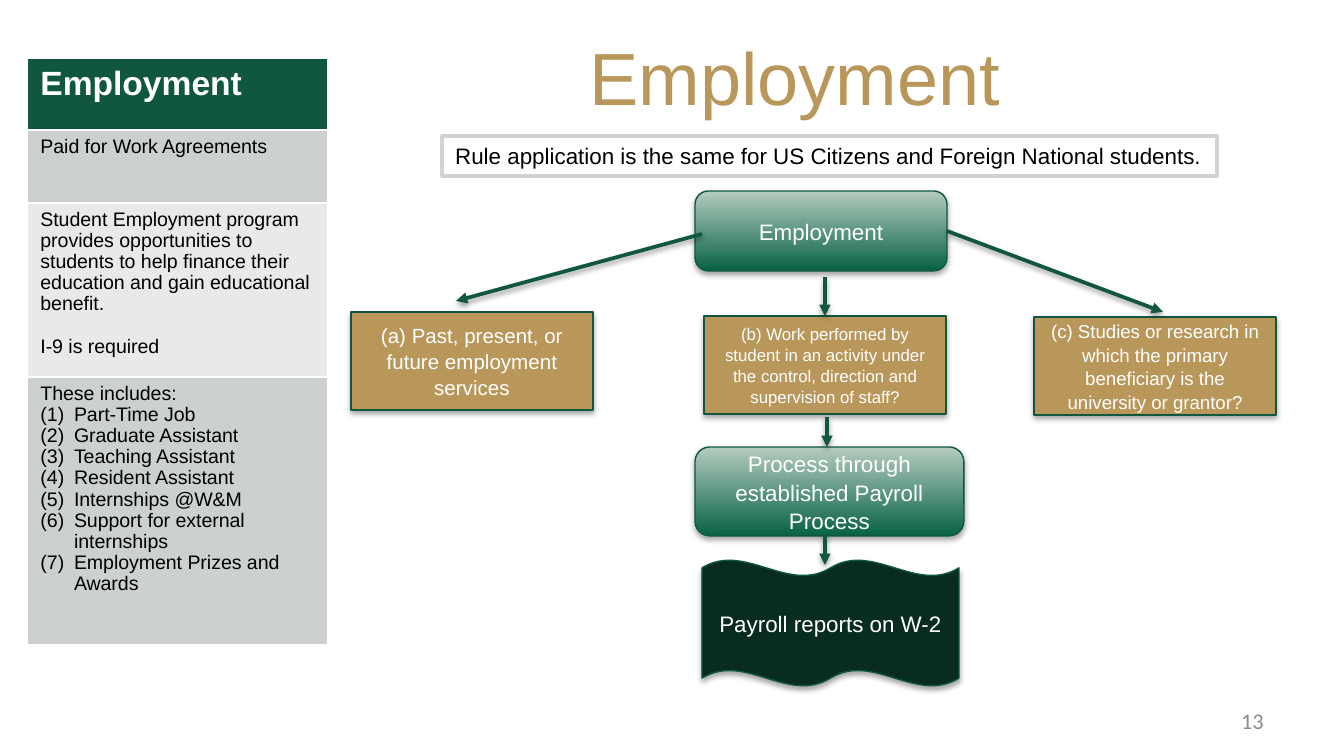
"""Build the Employment slide: a rules table beside a payroll flow chart."""
import lxml.etree
import pptx
import pptx.dml.color
import pptx.enum.shapes
import pptx.enum.text
import pptx.oxml
import pptx.oxml.ns
import pptx.util

PX = 6804
HUE = {
    "gold": "B9975B", "green": "115740", "edge": "0F573F", "deep": "076244",
    "pale": "B5CCC0", "dark": "082C20", "band": "CCD1CF", "light": "E7EAE8",
    "rim": "D0D3D4", "gray": "8C8C8C", "white": "FFFFFF", "black": "000000",
}
RGB = {key: pptx.dml.color.RGBColor.from_string(val) for key, val in HUE.items()}
ALIGN = pptx.enum.text.PP_ALIGN
MID = pptx.enum.text.MSO_ANCHOR.MIDDLE
KIND = pptx.enum.shapes.MSO_SHAPE
qn = pptx.oxml.ns.qn


def put(para, text, size, hue="black", face="Arial", bold=False,
        align=ALIGN.LEFT, lead=None, gap=None, num=False):
    para.alignment = align
    para.line_spacing = lead
    if gap:
        para.space_before = pptx.util.Pt(gap)
    if num:
        prop = para._p.get_or_add_pPr()
        prop.set("marL", "228600")
        prop.set("indent", "-228600")
        lxml.etree.SubElement(prop, qn("a:buFont")).set("typeface", "+mj-lt")
        lxml.etree.SubElement(prop, qn("a:buAutoNum")).set("type", "arabicParenBoth")
    run = para.add_run()
    run.text = text
    run.font.size = pptx.util.Pt(size)
    run.font.name = face
    run.font.bold = bold
    run.font.color.rgb = RGB[hue]


def shade(item, dist, alpha):
    prop = item._element.spPr
    for old in prop.findall(qn("a:effectLst")):
        prop.remove(old)
    prop.append(pptx.oxml.parse_xml(
        f'<a:effectLst {pptx.oxml.ns.nsdecls("a")}>'
        f'<a:outerShdw blurRad="{pptx.util.Pt(3.1)}" dist="{pptx.util.Pt(dist)}" '
        f'dir="5400000" rotWithShape="0"><a:srgbClr val="{HUE["black"]}">'
        f'<a:alpha val="{alpha * 1000}"/></a:srgbClr></a:outerShdw></a:effectLst>'))


deck = pptx.Presentation()
deck.slide_width = 1344 * PX
deck.slide_height = 756 * PX
slide = deck.slides.add_slide(deck.slide_layouts[5])
shapes = slide.shapes

title = shapes.title
title.left, title.top, title.width, title.height = [n * PX for n in (67, 31, 1210, 89)]
title.text_frame.margin_left = 259 * PX
title.text_frame.vertical_anchor = MID
put(title.text_frame.paragraphs[0], "Employment", 39.6, "gold", align=ALIGN.CENTER)

page = shapes.add_textbox(*[n * PX for n in (964, 700, 313, 40)]).text_frame
page.word_wrap = True
page.vertical_anchor = MID
put(page.paragraphs[0], "13", 12, "gray", "Calibri", align=ALIGN.RIGHT)

rows = [
    (72, "green", ["Employment"]),
    (73, "band", ["Paid for Work Agreements"]),
    (174, "light", [
        "Student Employment program provides opportunities to students to help "
        "finance their education and gain educational benefit.",
        "I-9 is required"]),
    (268, "band", [
        "These includes:", "Part-Time Job", "Graduate Assistant",
        "Teaching Assistant", "Resident Assistant", "Internships @W&M",
        "Support for external internships", "Employment Prizes and Awards"]),
]
high = sum(row[0] for row in rows)
table = shapes.add_table(len(rows), 1, *[n * PX for n in (27, 58, 301, high)]).table
table.horz_banding = False
for i, (tall, hue, lines) in enumerate(rows):
    table.rows[i].height = tall * PX
    cell = table.cell(i, 0)
    cell.fill.solid()
    cell.fill.fore_color.rgb = RGB[hue]
    for j, line in enumerate(lines):
        para = cell.text_frame.add_paragraph() if j else cell.text_frame.paragraphs[0]
        if i == 0:
            put(para, line, 18, "white", bold=True)
        else:
            put(para, line, 10.5, lead=0.97, num=i == 3 and j > 0,
                gap=11.5 if i == 2 and j else None)

steps = [
    ("past", KIND.RECTANGLE, (351, 312, 242, 98), "gold", 11,
     "(a) Past, present, or future employment services"),
    ("start", KIND.ROUNDED_RECTANGLE, (695, 191, 252, 80), None, 12, "Employment"),
    ("pay", KIND.ROUNDED_RECTANGLE, (695, 447, 269, 89), None, 12,
     "Process through established Payroll Process"),
    ("form", KIND.DOUBLE_WAVE, (702, 560, 257, 126), "dark", 12,
     "Payroll reports on W-2"),
    ("study", KIND.RECTANGLE, (1034, 317, 242, 98), "gold", 10,
     "(c) Studies or research in which the primary beneficiary is the "
     "university or grantor?"),
    ("work", KIND.RECTANGLE, (704, 316, 242, 98), "gold", 9,
     "(b) Work performed by student in an activity under the control, "
     "direction and supervision of staff?"),
]
nodes = {}
for name, kind, box, hue, size, text in steps:
    node = nodes[name] = shapes.add_shape(kind, *[n * PX for n in box])
    if hue:
        node.fill.solid()
        node.fill.fore_color.rgb = RGB[hue]
    else:
        node.fill.gradient()
        node.fill.gradient_angle = 90
        for stop, tint in zip(node.fill.gradient_stops, ("deep", "pale")):
            stop.color.rgb = RGB[tint]
    node.line.color.rgb = RGB["edge"]
    node.line.width = pptx.util.Pt(0.75)
    node.shadow.inherit = False
    shade(node, 1.8, 35)
    frame = node.text_frame
    frame.word_wrap = True
    frame.vertical_anchor = MID
    put(frame.paragraphs[0], text, size, "white", align=ALIGN.CENTER, lead=1.05)

links = [
    ((825, 277, 825, 316), None, ("work", 0)),
    ((702, 234, 456, 301), None, None),
    ((947, 231, 1163, 312), ("start", 3), None),
    ((827, 417, 827, 447), None, None),
    ((825, 535, 825, 565), None, None),
]
for ends, head, tail in links:
    link = shapes.add_connector(pptx.enum.shapes.MSO_CONNECTOR.STRAIGHT,
                                *[n * PX for n in ends])
    if head:
        link.begin_connect(nodes[head[0]], head[1])
    if tail:
        link.end_connect(nodes[tail[0]], tail[1])
    link.line.color.rgb = RGB["green"]
    link.line.width = pptx.util.Pt(2)
    lxml.etree.SubElement(link.line._get_or_add_ln(), qn("a:tailEnd")).set("type", "triangle")
    shade(link, 1.6, 38)

rule = shapes.add_shape(KIND.RECTANGLE, *[n * PX for n in (442, 136, 775, 40)])
rule.shadow.inherit = False
rule.fill.solid()
rule.fill.fore_color.rgb = RGB["white"]
rule.line.color.rgb = RGB["rim"]
rule.line.width = pptx.util.Pt(2)
rule.text_frame.word_wrap = True
rule.text_frame.margin_right = 0
rule.text_frame.vertical_anchor = pptx.enum.text.MSO_ANCHOR.TOP
put(rule.text_frame.paragraphs[0],
    "Rule application is the same for US Citizens and Foreign National students.", 12)

deck.save("out.pptx")
